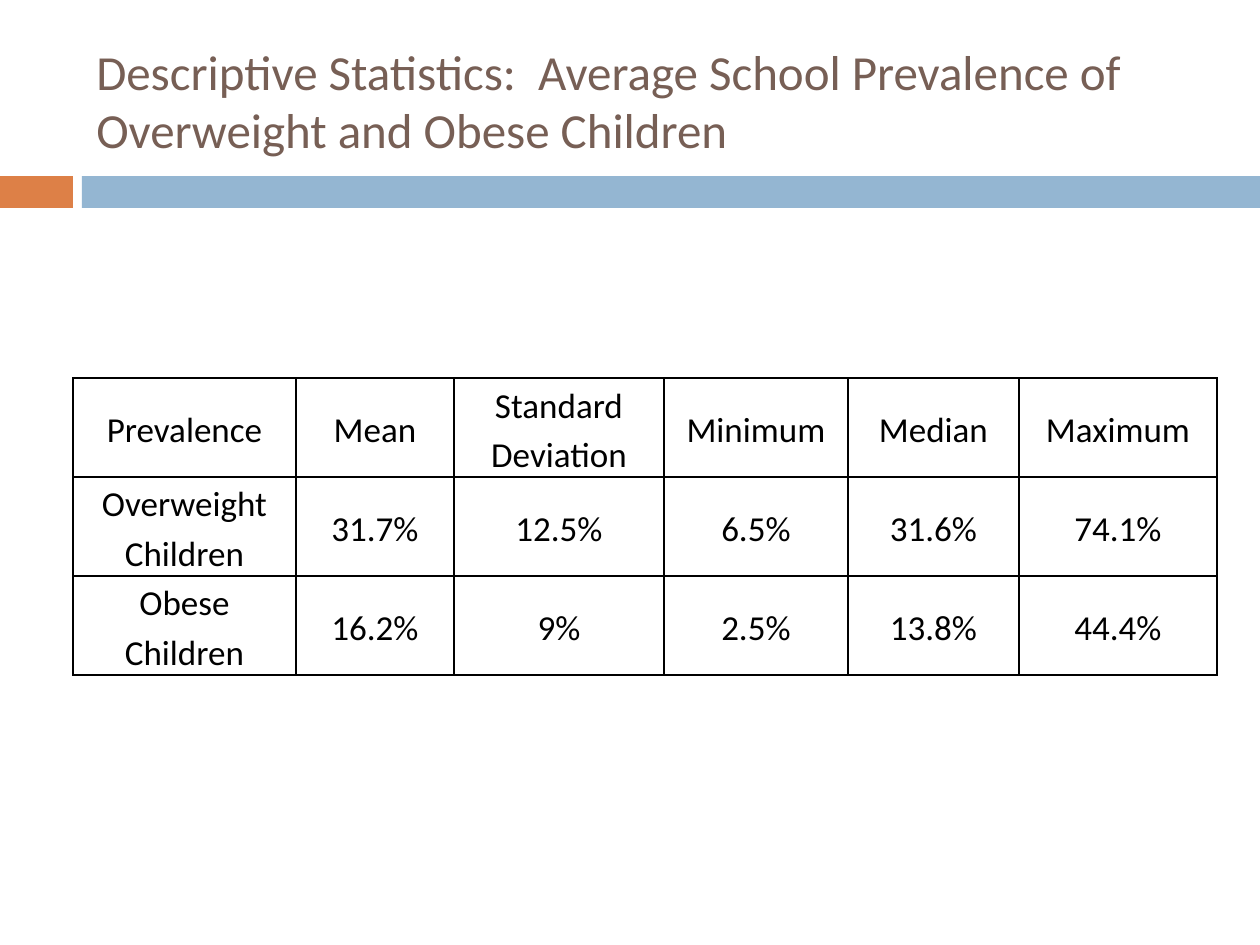
from dataclasses import dataclass

from lxml.etree import SubElement
from pptx import Presentation
from pptx.dml.color import RGBColor
from pptx.enum.shapes import MSO_SHAPE
from pptx.enum.text import MSO_ANCHOR, PP_ALIGN
from pptx.oxml.ns import qn
from pptx.util import Emu, Pt


@dataclass(frozen=True)
class Theme:
    font: str = "Calibri"
    title_size: int = 28
    table_size: int = 20
    title_color: str = "775F55"
    ink: str = "000000"
    paper: str = "FFFFFF"
    accent: str = "DD8047"
    band: str = "94B6D2"
    border_width: int = 1


HEADERS = ["Prevalence", "Mean", "Standard Deviation", "Minimum", "Median", "Maximum"]
ROWS = [
    ["Overweight Children", "31.7%", "12.5%", "6.5%", "31.6%", "74.1%"],
    ["Obese\nChildren", "16.2%", "9%", "2.5%", "13.8%", "44.4%"],
]
COLUMN_WIDTHS = [223, 158, 210, 184, 171, 198]
ROW_HEIGHT = 99


def px(length):
    return Emu(round(length * 914400 / 126))


def apply_format(target, values):
    for name, value in values.items():
        setattr(target, name, value)


class SlideBuilder:
    def __init__(self, slide, theme):
        self.slide = slide
        self.theme = theme
        background = slide.background.fill
        background.solid()
        background.fore_color.rgb = RGBColor.from_string(theme.paper)

    def style_text(self, frame, size, color, paragraph_format):
        for para in frame.paragraphs:
            apply_format(para, paragraph_format)
            for span in para.runs:
                apply_format(span.font, {"name": self.theme.font, "size": Pt(size)})
                span.font.color.rgb = RGBColor.from_string(color)

    def bar(self, left, top, width, height, color):
        box = self.slide.shapes.add_shape(
            MSO_SHAPE.RECTANGLE, px(left), px(top), px(width), px(height)
        )
        box.shadow.inherit = False
        box.fill.solid()
        box.fill.fore_color.rgb = RGBColor.from_string(color)
        box.line.fill.background()

    def title(self, left, top, width, height, text):
        box = self.slide.shapes.add_textbox(px(left), px(top), px(width), px(height))
        frame = box.text_frame
        apply_format(frame, {"word_wrap": True, "vertical_anchor": MSO_ANCHOR.MIDDLE})
        frame.text = text
        self.style_text(
            frame, self.theme.title_size, self.theme.title_color, {"alignment": PP_ALIGN.LEFT}
        )

    def cell_borders(self, cell):
        properties = cell._tc.get_or_add_tcPr()
        for position, side in enumerate(("a:lnL", "a:lnR", "a:lnT", "a:lnB")):
            border = SubElement(properties, qn(side), w=str(Pt(self.theme.border_width)))
            fill = SubElement(border, qn("a:solidFill"))
            SubElement(fill, qn("a:srgbClr"), val=self.theme.ink)
            properties.insert(position, border)

    def table(self, left, top, widths, row_height, rows):
        table = self.slide.shapes.add_table(
            len(rows), len(widths), px(left), px(top), px(sum(widths)), px(row_height * len(rows))
        ).table
        apply_format(table, {"first_row": False, "horz_banding": False})
        for column, width in zip(table.columns, widths):
            column.width = px(width)
        cell_format = {
            "vertical_anchor": MSO_ANCHOR.MIDDLE,
            "margin_left": px(9),
            "margin_right": px(9),
            "margin_top": 0,
            "margin_bottom": 0,
        }
        paragraph_format = {"alignment": PP_ALIGN.CENTER, "line_spacing": 1.15}
        for row, values in zip(table.rows, rows):
            row.height = px(row_height)
            for cell, text in zip(row.cells, values):
                cell.text_frame.text = text
                apply_format(cell, cell_format)
                cell.fill.background()
                self.cell_borders(cell)
                self.style_text(
                    cell.text_frame, self.theme.table_size, self.theme.ink, paragraph_format
                )


def main():
    deck = Presentation()
    apply_format(deck, {"slide_width": px(1260), "slide_height": px(945)})
    theme = Theme()
    page = SlideBuilder(deck.slides.add_slide(deck.slide_layouts[6]), theme)
    page.bar(0, 176, 73, 32, theme.accent)
    page.bar(82, 176, 1178, 32, theme.band)
    page.title(
        84, 32, 1124, 136,
        "Descriptive Statistics:  Average School Prevalence of Overweight and Obese Children",
    )
    page.table(73, 378, COLUMN_WIDTHS, ROW_HEIGHT, [HEADERS, *ROWS])
    deck.save("out.pptx")


if __name__ == "__main__":
    main()
